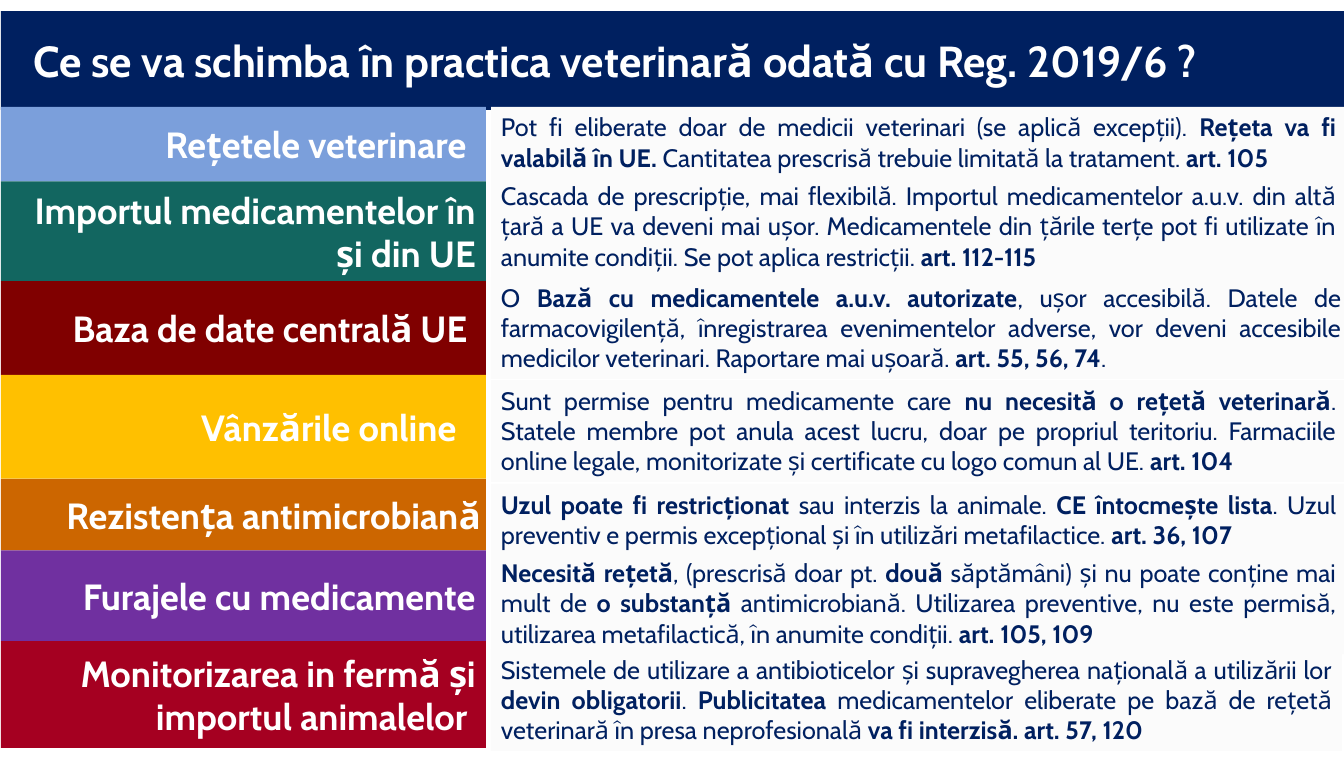
from dataclasses import dataclass

from pptx import Presentation
from pptx.dml.color import RGBColor
from pptx.enum.shapes import MSO_SHAPE as ShapeKind
from pptx.enum.text import MSO_ANCHOR as Anchor, MSO_AUTO_SIZE as AutoSize, PP_ALIGN as Align
from pptx.shapes.autoshape import Shape
from pptx.slide import Slide
from pptx.util import Inches, Length, Pt

# Grid: columns and rows of a tenth of an inch
COLUMNS, ROWS = 133.3, 75.1
LABEL_WIDTH = 48.1
BODY_LEFT = 48.7
BODY_PADDING, BODY_LINE = 1.1, 3.0
FONT = "Cabin"
COLORS = {
    "navy": "002060",
    "white": "FFFFFF",
    "panel": "FBFBFB",
    "blue": "7B9FDB",
    "green": "126660",
    "maroon": "800000",
    "yellow": "FFC000",
    "orange": "CC6600",
    "purple": "7030A0",
    "crimson": "A50021",
}


@dataclass
class Topic:
    """One row: coloured label and explanation, with **bold** marks."""
    label: str
    color: str
    top: float
    bottom: float
    body_top: float
    body_lines: int
    body: str
    body_right: float = 133.5
    label_margin: float = 1.0


TOPICS = [
    Topic("Rețetele veterinare", "blue", 10.6, 18, 10.6, 2,
          "Pot fi eliberate doar de medicii veterinari (se aplică excepții). **Rețeta va fi "
          "valabilă în UE. **Cantitatea prescrisă trebuie limitată la tratament. **art. 105**",
          label_margin=1.9),
    Topic("Importul medicamentelor în și din UE", "green", 18, 27.9, 17.4, 3,
          "Cascada de prescripție, mai flexibilă. Importul medicamentelor a.u.v. din altă țară "
          "a UE va deveni mai ușor. Medicamentele din țările terțe pot fi utilizate în anumite "
          "condiții. Se pot aplica restricții. **art. 112-115**"),
    Topic("Baza de date centrală UE ", "maroon", 27.9, 37.2, 27.5, 3,
          "O **Bază cu medicamentele a.u.v. autorizate**, ușor accesibilă. Datele de "
          "farmacovigilență, înregistrarea evenimentelor adverse, vor deveni accesibile "
          "medicilor veterinari. Raportare mai ușoară. **art. 55, 56, 74**.",
          body_right=134),
    Topic("Vânzările online", "yellow", 37.2, 47.5, 37.7, 3,
          "Sunt permise pentru medicamente care **nu necesită o rețetă veterinară**. Statele "
          "membre pot anula acest lucru, doar pe propriul teritoriu. Farmaciile online legale, "
          "monitorizate și certificate cu logo comun al UE. **art. 104**",
          label_margin=2.9),
    Topic("Rezistența antimicrobiană", "orange", 47.5, 54.6, 48, 2,
          "**Uzul poate fi restricționat **sau interzis la animale. **CE întocmește lista**. "
          "Uzul preventiv e permis excepțional și în utilizări metafilactice. **art. 36, 107**",
          label_margin=0.5),
    Topic("Furajele cu medicamente", "purple", 54.6, 63.6, 54.8, 3,
          "**Necesită rețetă**, (prescrisă doar pt. **două **săptămâni) și nu poate conține mai "
          "mult de **o substanță **antimicrobiană. Utilizarea preventive, nu este permisă, "
          "utilizarea metafilactică, în anumite condiții. **art. 105, 109**"),
    Topic("Monitorizarea in fermă și importul animalelor ", "crimson", 63.6, 74.2, 64.4, 3,
          "Sistemele de utilizare a antibioticelor și supravegherea națională a utilizării lor "
          "**devin obligatorii**. **Publicitatea **medicamentelor eliberate pe bază de rețetă "
          "veterinară în presa neprofesională **va fi interzisă. art. 57, 120**",
          body_right=133.1),
]


def grid(cells: float) -> Length:
    return Inches(cells / 10)


def place(shape: Shape, left: float, top: float, width: float, height: float) -> None:
    shape.left, shape.top = grid(left), grid(top)
    shape.width, shape.height = grid(width), grid(height)


def style(shape: Shape, fill: str, color: str, size: float, align: Align, anchor: Anchor) -> None:
    """Fill a shape and format its single paragraph."""
    shape.fill.solid()
    shape.fill.fore_color.rgb = RGBColor.from_string(COLORS[fill])
    shape.line.fill.background()
    frame = shape.text_frame
    frame.word_wrap = True
    frame.auto_size = AutoSize.NONE
    frame.vertical_anchor = anchor
    paragraph = frame.paragraphs[0]
    paragraph.alignment = align
    paragraph.font.name = FONT
    paragraph.font.size = Pt(size)
    paragraph.font.color.rgb = RGBColor.from_string(COLORS[color])


def add_panel(slide: Slide, left: float, top: float, width: float, height: float) -> Shape:
    shape = slide.shapes.add_shape(ShapeKind.RECTANGLE, 0, 0, 0, 0)
    place(shape, left, top, width, height)
    shape.shadow.inherit = False
    return shape


def add_title(slide: Slide) -> None:
    title = slide.shapes.title
    place(title, 0.1, 1.1, 133.9, 9.8)
    title.text_frame.text = "Ce se va schimba în practica veterinară odată cu Reg. 2019/6 ?"
    title.text_frame.margin_left = grid(3.2)
    style(title, "navy", "white", 31, Align.LEFT, Anchor.MIDDLE)
    title.text_frame.paragraphs[0].font.bold = True


def add_label(slide: Slide, topic: Topic) -> None:
    label = add_panel(slide, 0.1, topic.top, LABEL_WIDTH, topic.bottom - topic.top)
    label.text_frame.text = topic.label
    label.text_frame.margin_right = grid(topic.label_margin)
    style(label, topic.color, "white", 26, Align.RIGHT, Anchor.MIDDLE)
    label.text_frame.paragraphs[0].font.bold = True


def add_body(slide: Slide, topic: Topic) -> None:
    body = add_panel(slide, BODY_LEFT, topic.body_top, topic.body_right - BODY_LEFT,
                     BODY_PADDING + BODY_LINE * topic.body_lines)
    style(body, "panel", "navy", 18, Align.JUSTIFY, Anchor.TOP)
    for index, part in enumerate(topic.body.split("**")):
        if part:
            run = body.text_frame.paragraphs[0].add_run()
            run.text = part
            run.font.bold = index % 2 == 1


def main() -> None:
    presentation = Presentation()
    presentation.slide_width, presentation.slide_height = grid(COLUMNS), grid(ROWS)
    title_only = presentation.slide_layouts[5]
    slide = presentation.slides.add_slide(title_only)
    add_title(slide)
    for topic in TOPICS:
        add_label(slide, topic)
        add_body(slide, topic)
    presentation.save("out.pptx")


if __name__ == "__main__":
    main()
